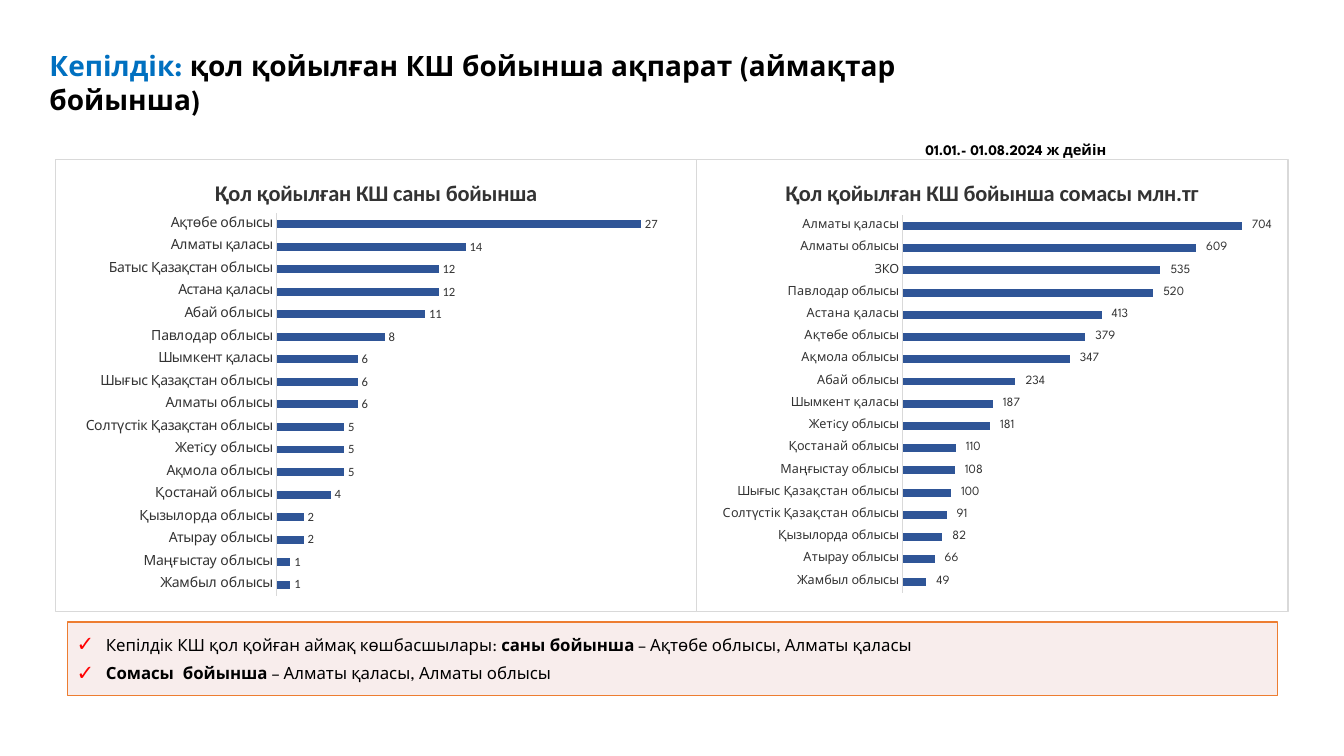
from lxml import etree
from pptx import Presentation
from pptx.chart.data import CategoryChartData
from pptx.dml.color import RGBColor
from pptx.enum.chart import XL_CHART_TYPE, XL_LABEL_POSITION, XL_TICK_MARK
from pptx.enum.text import MSO_ANCHOR, MSO_AUTO_SIZE, PP_ALIGN
from pptx.oxml import parse_xml
from pptx.oxml.ns import nsdecls, qn
from pptx.util import Inches, Pt

COUNTS = [
    ("Жамбыл облысы", 1), ("Маңғыстау облысы", 1), ("Атырау облысы", 2),
    ("Қызылорда облысы", 2), ("Қостанай облысы", 4), ("Ақмола облысы", 5),
    ("Жетiсу облысы", 5), ("Солтүстік Қазақстан облысы", 5),
    ("Алматы облысы", 6), ("Шығыс Қазақстан облысы", 6),
    ("Шымкент қаласы", 6), ("Павлодар облысы", 8), ("Абай облысы", 11),
    ("Астана қаласы", 12), ("Батыс Қазақстан облысы", 12),
    ("Алматы қаласы", 14), ("Ақтөбе облысы", 27),
]
SUMS = [
    ("Жамбыл облысы", 49), ("Атырау облысы", 66), ("Қызылорда облысы", 82),
    ("Солтүстік Қазақстан облысы", 91), ("Шығыс Қазақстан облысы", 100),
    ("Маңғыстау облысы", 108), ("Қостанай облысы", 110),
    ("Жетiсу облысы", 181), ("Шымкент қаласы", 187), ("Абай облысы", 234),
    ("Ақмола облысы", 347), ("Ақтөбе облысы", 379), ("Астана қаласы", 413),
    ("Павлодар облысы", 520), ("ЗКО", 535), ("Алматы облысы", 609),
    ("Алматы қаласы", 704),
]
LEADERS = [
    [("Кепілдік КШ қол қойған аймақ көшбасшылары: ", False),
     ("саны бойынша", True), (" – Ақтөбе облысы, Алматы қаласы", False)],
    [("Сомасы  бойынша ", True), ("– Алматы қаласы, Алматы облысы", False)],
]
MONEY = "_-* #\\ ##0_р_._-"


def paint(target, color):
    """Give a fill a solid colour."""
    target.solid()
    target.fore_color.rgb = RGBColor.from_string(color)


class Board:
    face, plain = "League Spartan", "Calibri"
    black, gray, blue, bar = "000000", "333333", "0070C0", "2F5597"
    rule, edge, rose, red = "D9D9D9", "ED7D31", "F2DCDB", "FF0000"

    def __init__(self, slide):
        self.slide = slide

    def style(self, font, size, color, bold=False, face=None):
        font.name, font.size, font.bold = face or self.face, Pt(size), bold
        font.color.rgb = RGBColor.from_string(color)

    def place(self, shape, box):
        shape.left, shape.top, shape.width, shape.height = map(Inches, box)

    def title(self, box, parts):
        shape = self.slide.shapes.title
        self.place(shape, box)
        frame = shape.text_frame
        frame.auto_size = MSO_AUTO_SIZE.NONE
        frame.vertical_anchor = MSO_ANCHOR.TOP
        line = frame.paragraphs[0]
        line.alignment = PP_ALIGN.LEFT
        for text, color in parts:
            run = line.add_run()
            run.text = text
            self.style(run.font, 20, color, True)

    def label(self, box, text):
        frame = self.slide.shapes.add_textbox(*map(Inches, box)).text_frame
        frame.word_wrap = True
        frame.text = text
        self.style(frame.paragraphs[0].runs[0].font, 10.5, self.black, True)

    def check(self, line):
        """Put a red tick before a paragraph."""
        props = line._p.get_or_add_pPr()
        props.set("marL", str(Inches(0.3)))
        props.set("indent", str(Inches(-0.29)))
        color = etree.SubElement(props, qn("a:buClr"))
        etree.SubElement(color, qn("a:srgbClr"), val=self.red)
        etree.SubElement(props, qn("a:buSzPct"), val="125000")
        etree.SubElement(props, qn("a:buChar"), char="✓")

    def ticks(self, box, rows):
        shape = self.slide.placeholders[1]
        self.place(shape, box)
        paint(shape.fill, self.rose)
        tint = shape._element.spPr.find(".//" + qn("a:srgbClr"))
        etree.SubElement(tint, qn("a:alpha"), val="50000")
        paint(shape.line.fill, self.edge)
        shape.line.width = Pt(1)
        frame = shape.text_frame
        frame.auto_size = MSO_AUTO_SIZE.NONE
        frame.vertical_anchor = MSO_ANCHOR.MIDDLE
        frame.margin_left = frame.margin_right = Inches(0.08)
        frame.margin_top = frame.margin_bottom = Inches(0.04)
        for i, parts in enumerate(rows):
            line = frame.add_paragraph() if i else frame.paragraphs[0]
            self.check(line)
            line.space_before, line.space_after = Pt(0), Pt(6)
            for text, bold in parts:
                run = line.add_run()
                run.text = text
                self.style(run.font, 12, self.black, bold)

    def frame(self, chart, plot):
        """Set the chart's white ground, border and inner plot area."""
        chart._chartSpace.find(qn("c:chart")).addnext(parse_xml(
            f'<c:spPr {nsdecls("c", "a")}><a:solidFill>'
            '<a:srgbClr val="FFFFFF"/></a:solidFill><a:ln w="9525"><a:solidFill>'
            f'<a:srgbClr val="{self.rule}"/></a:solidFill></a:ln></c:spPr>'))
        area = chart._chartSpace.find(".//" + qn("c:plotArea"))
        for old in area.findall(qn("c:layout")):
            area.remove(old)
        layout = etree.Element(qn("c:layout"))
        area.insert(0, layout)
        manual = etree.SubElement(layout, qn("c:manualLayout"))
        tags = ("layoutTarget", "xMode", "yMode", "x", "y", "w", "h")
        for tag, val in zip(tags, ("inner", "edge", "edge", *plot)):
            etree.SubElement(manual, qn("c:" + tag), val=str(val))

    def bars(self, box, title, rows, top, plot, size, face, code):
        data = CategoryChartData()
        data.categories = [name for name, _ in rows]
        data.add_series("Series 1", [value for _, value in rows])
        chart = self.slide.shapes.add_chart(
            XL_CHART_TYPE.BAR_CLUSTERED, *map(Inches, box), data).chart
        self.style(chart.font, 10, self.black, face=self.plain)
        chart.has_legend = False
        chart.has_title = True
        chart.chart_title.text_frame.text = title
        head = chart.chart_title.text_frame.paragraphs[0].runs[0]
        self.style(head.font, 16, self.gray, True, self.plain)
        self.frame(chart, plot)

        names, scale = chart.category_axis, chart.value_axis
        names.major_tick_mark = XL_TICK_MARK.NONE
        names.format.line.width = Pt(0.75)
        paint(names.format.line.fill, self.rule)
        self.style(names.tick_labels.font, size, self.gray)
        scale.visible = scale.has_major_gridlines = False
        scale.minimum_scale, scale.maximum_scale = 0, top

        group = chart.plots[0]
        group.gap_width = 182
        group.vary_by_categories = False
        paint(group.series[0].format.fill, self.bar)
        group.has_data_labels = True
        marks = group.data_labels
        marks.show_value = True
        marks.position = XL_LABEL_POSITION.OUTSIDE_END
        marks.number_format, marks.number_format_is_linked = code, False
        self.style(marks.font, 9, self.gray, face=face)


def main():
    deck = Presentation()
    deck.slide_width, deck.slide_height = Inches(13.33), Inches(7.5)
    board = Board(deck.slides.add_slide(deck.slide_layouts[1]))
    board.title((0.39, 0.43, 9.14, 0.77), [
        ("Кепілдік: ", board.blue),
        ("қол қойылған КШ бойынша ақпарат (аймақтар бойынша)", board.black)])
    board.label((9.08, 1.35, 2.64, 0.28), "01.01.- 01.08.2024 ж дейін")
    board.ticks((0.67, 6.17, 12, 0.73), LEADERS)
    board.bars((0.55, 1.58, 6.36, 4.49), "Қол қойылған КШ саны бойынша",
               COUNTS, 30, (0.345, 0.118, 0.632, 0.848), 10, board.plain,
               "General")
    board.bars((6.9, 1.58, 5.88, 4.49), "Қол қойылған КШ бойынша сомасы млн.тг",
               SUMS, 800, (0.349, 0.122, 0.651, 0.837), 9, board.face, MONEY)
    deck.save("out.pptx")


if __name__ == "__main__":
    main()
